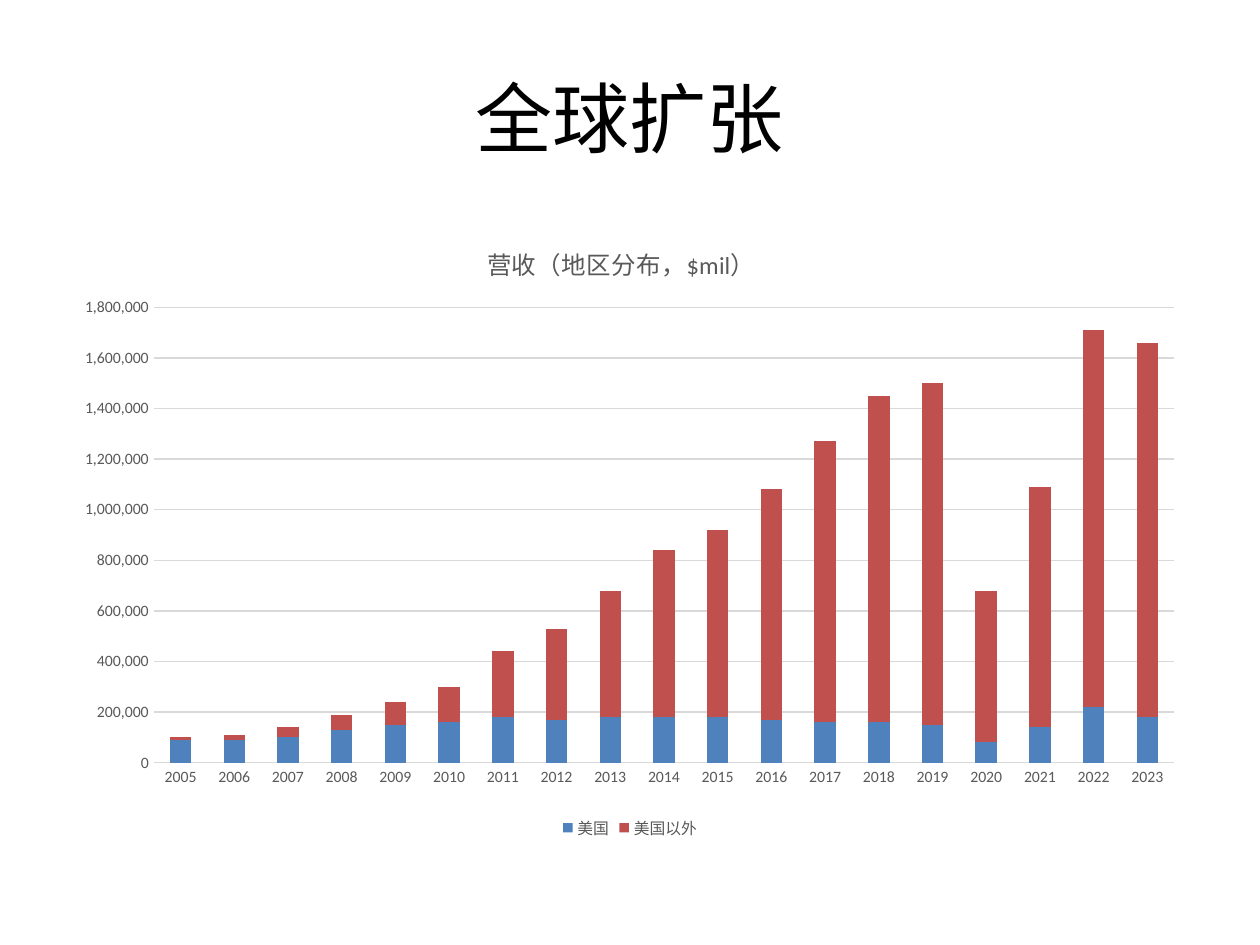
from lxml import etree
from pptx import Presentation
from pptx.chart.data import CategoryChartData
from pptx.dml.color import RGBColor
from pptx.enum.chart import XL_CHART_TYPE, XL_LEGEND_POSITION, XL_TICK_MARK
from pptx.enum.text import MSO_ANCHOR, PP_ALIGN
from pptx.oxml.ns import qn
from pptx.util import Pt

STACKED = XL_CHART_TYPE.COLUMN_STACKED
BOTTOM = XL_LEGEND_POSITION.BOTTOM
NO_TICK = XL_TICK_MARK.NONE
MIDDLE = MSO_ANCHOR.MIDDLE
CENTER = PP_ALIGN.CENTER

BLACK = RGBColor(0x00, 0x00, 0x00)
GRAY = RGBColor(0x59, 0x59, 0x59)
PALE = RGBColor(0xD9, 0xD9, 0xD9)
BLUE = RGBColor(0x4F, 0x81, 0xBD)
RED = RGBColor(0xC0, 0x50, 0x4D)
FACE = "Calibri"
SCALE = 914400 / 126


def px(*sizes):
    """Turn pixel lengths into EMU."""
    return [round(size * SCALE) for size in sizes]


def style(font, size, color):
    font.name, font.size, font.bold = FACE, Pt(size), False
    font.color.rgb = color


deck = Presentation()
deck.slide_width, deck.slide_height = px(1260, 945)
slide = deck.slides.add_slide(deck.slide_layouts[6])

# Heading
box = slide.shapes.add_textbox(*px(63, 38, 1134, 157))
frame = box.text_frame
frame.word_wrap = True
frame.vertical_anchor = MIDDLE
frame.text = "全球扩张"
head = frame.paragraphs[0]
head.alignment = CENTER
style(head.runs[0].font, 44, BLACK)

# Revenue in thousands, by region
home = [90, 90, 100, 130, 150, 160, 180, 170, 180, 180,
        180, 170, 160, 160, 150, 80, 140, 220, 180]
abroad = [10, 20, 40, 60, 90, 140, 260, 360, 500, 660,
          740, 910, 1110, 1290, 1350, 600, 950, 1490, 1480]
data = CategoryChartData(number_format="###,##0")
data.categories = [str(year) for year in range(2005, 2024)]
for name, sales in (("美国", home), ("美国以外", abroad)):
    data.add_series(name, [sale * 1000 for sale in sales])

chart = slide.shapes.add_chart(STACKED, *px(63, 220, 1134, 624), data).chart
style(chart.font, 10, BLACK)
chart.has_title = True
title = chart.chart_title
title.include_in_layout = False
title.text_frame.text = "营收（地区分布，$mil）"
style(title.text_frame.paragraphs[0].runs[0].font, 14, GRAY)

chart.has_legend = True
chart.legend.position = BOTTOM
chart.legend.include_in_layout = False
style(chart.legend.font, 9, GRAY)

plot = chart.plots[0]
plot.gap_width, plot.overlap = 150, 100
plot.vary_by_categories = False
for series, color in zip(plot.series, (BLUE, RED)):
    series.format.fill.solid()
    series.format.fill.fore_color.rgb = color

years, values = chart.category_axis, chart.value_axis
for axis in (years, values):
    axis.major_tick_mark = axis.minor_tick_mark = NO_TICK
    style(axis.tick_labels.font, 9, GRAY)
values.minimum_scale, values.maximum_scale = 0, 1800000
values.major_unit = 200000
values.tick_labels.number_format = "###,##0"
values.tick_labels.number_format_is_linked = False
values.has_major_gridlines = True
values.format.line.fill.background()
for line in (years.format.line, values.major_gridlines.format.line):
    line.color.rgb = PALE
    line.width = Pt(0.75)

# Fixed places of the title and the plot, as shares of the chart
area = plot._element.getparent()
top = title._element
for part, spot, share in (
    (top, 1, {"x": 0.37, "y": 0.03}),
    (area, 0, {"x": 0.08, "y": 0.14, "w": 0.9, "h": 0.73}),
):
    for old in part.findall(qn("c:layout")):
        part.remove(old)
    layout = etree.Element(qn("c:layout"))
    part.insert(spot, layout)
    manual = etree.SubElement(layout, qn("c:manualLayout"))
    if part is area:
        etree.SubElement(manual, qn("c:layoutTarget"), val="inner")
    for side in ("x", "y"):
        etree.SubElement(manual, qn(f"c:{side}Mode"), val="edge")
    for side, size in share.items():
        etree.SubElement(manual, qn(f"c:{side}"), val=str(size))

deck.save("out.pptx")
